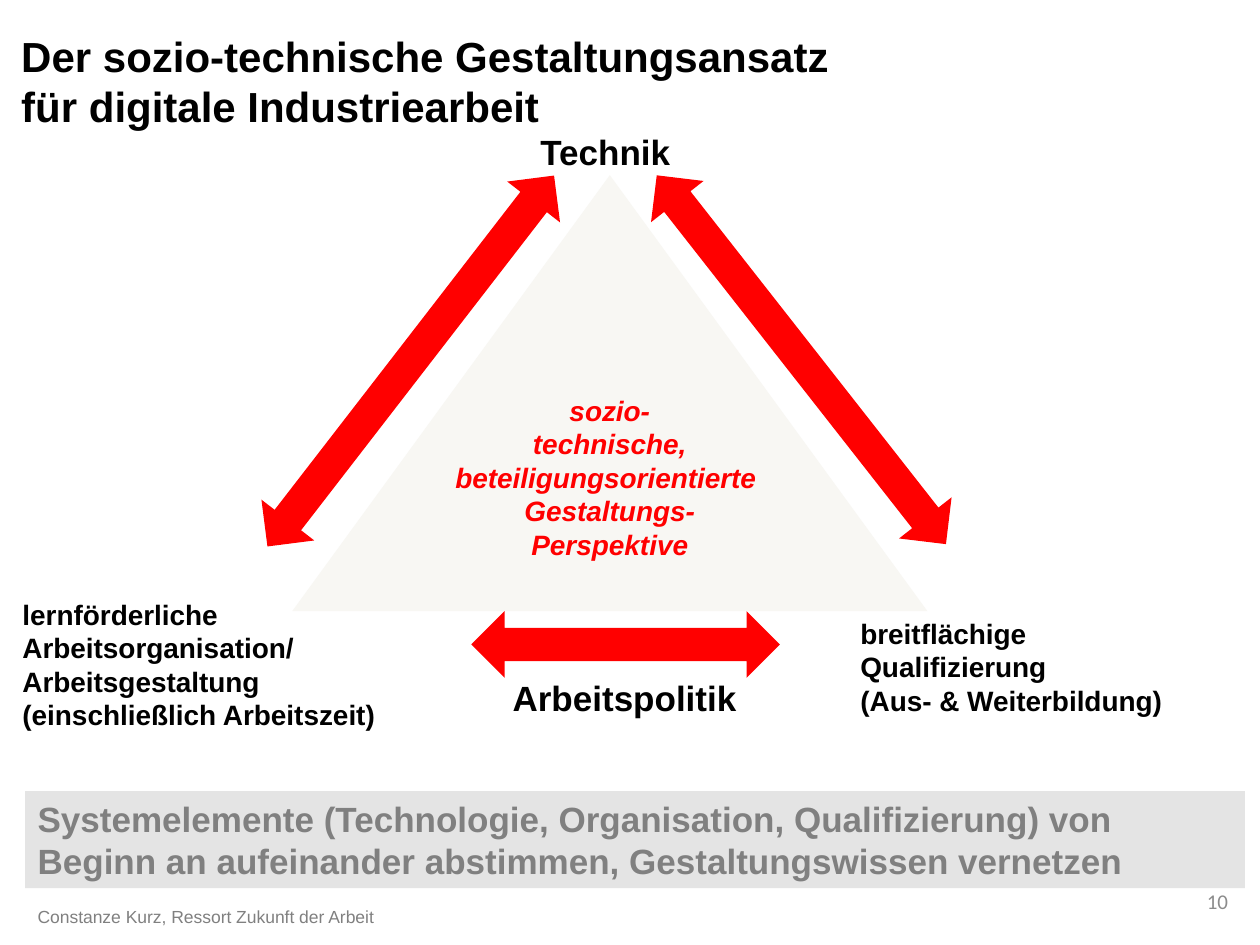
from dataclasses import dataclass
from lxml.etree import SubElement
from pptx import Presentation
from pptx.dml.color import RGBColor
from pptx.enum.shapes import MSO_SHAPE as Preset
from pptx.enum.text import MSO_ANCHOR as Anchor, PP_ALIGN as Align
from pptx.oxml.ns import qn
from pptx.util import Inches, Pt

BLACK, RED, GREY = "000000", "FF0000", "808080"


def color(value):
    return RGBColor.from_string(value)


@dataclass
class SlideBuilder:
    """Draws styled elements on the current slide."""

    slide: object
    font: str = "Arial"

    def set_text(self, shape, lines, size, ink=BLACK, bold=True, italic=False,
                 align=Align.LEFT, anchor=Anchor.TOP, wrap=True, font=None):
        frame = shape.text_frame
        frame.word_wrap = wrap
        frame.vertical_anchor = anchor
        frame.text = "\n".join(lines)
        for paragraph in frame.paragraphs:
            paragraph.alignment = align
            style = paragraph.font
            style.name, style.size = font or self.font, Pt(size)
            style.bold, style.italic = bold, italic
            style.color.rgb = color(ink)

    def text(self, box, lines, size, **style):
        shape = self.slide.shapes.add_textbox(*map(Inches, box))
        self.set_text(shape, lines, size, **style)

    def shape(self, preset, box, fill, alpha=None, rotation=0):
        shape = self.slide.shapes.add_shape(preset, *map(Inches, box))
        shape.shadow.inherit = False
        shape.fill.solid()
        shape.fill.fore_color.rgb = color(fill)
        shape.line.fill.background()
        shape.rotation = rotation
        if alpha is not None:
            tone = shape._element.spPr.find(qn("a:solidFill"))[0]
            SubElement(tone, qn("a:alpha"), val=str(alpha * 1000))
        return shape

    def core(self, box, lines):
        triangle = self.shape(Preset.ISOSCELES_TRIANGLE, box, "F8F7F3")
        frame = triangle.text_frame
        frame.margin_left = frame.margin_right = 0
        frame.margin_top = frame.margin_bottom = 0
        self.set_text(triangle, lines, 16, ink=RED, italic=True, align=Align.CENTER)

    def arrow(self, left, top, width, rotation):
        self.shape(Preset.LEFT_RIGHT_ARROW, (left, top, width, 0.53), RED,
                   rotation=rotation)

    def banner(self, box, message):
        bar = self.shape(Preset.RECTANGLE, box, "C0C0C0", alpha=42)
        self.set_text(bar, [message], 20, ink=GREY)


def main():
    presentation = Presentation()
    presentation.slide_width, presentation.slide_height = Inches(10), Inches(7.5)
    builder = SlideBuilder(presentation.slides.add_slide(presentation.slide_layouts[6]))

    builder.text((0.07, 0.19, 8.95, 0.73),
                 ["Der sozio-technische Gestaltungsansatz \vfür digitale Industriearbeit"], 24)
    builder.core((2.32, 1.39, 5.04, 3.46),
                 ["sozio-", "technische, beteiligungsorientierte ",
                  "Gestaltungs-", "Perspektive"])

    corners = [
        ((4.19, 0.99, 1.32, 0.44), 20, ["Technik"]),
        ((0.08, 4.69, 3.04, 1.18), 16,
         ["lernförderliche", "Arbeitsorganisation/", "Arbeitsgestaltung",
          "(einschließlich Arbeitszeit)"]),
        ((6.73, 4.84, 2.63, 0.91), 16,
         ["breitflächige", "Qualifizierung", "(Aus- & Weiterbildung)"]),
        ((3.97, 5.32, 2.07, 0.44), 20, ["Arbeitspolitik"]),
    ]
    for box, size, lines in corners:
        builder.text(box, lines, size, wrap=False)

    for arrow in [(1.4, 2.6, 3.72, 307.7), (4.5, 2.59, 3.72, 231.9),
                  (3.74, 4.85, 2.45, 180)]:
        builder.arrow(*arrow)

    builder.banner((0.2, 6.28, 9.68, 0.77),
                   "Systemelemente (Technologie, Organisation, Qualifizierung) von "
                   "Beginn an aufeinander abstimmen, Gestaltungswissen vernetzen")
    builder.text((0.2, 7.14, 3.86, 0.17),
                 ["Constanze Kurz, Ressort Zukunft der Arbeit"], 10, ink=GREY, bold=False)
    builder.text((9.48, 6.95, 0.64, 0.4), ["10"], 12, ink="8C8C8C", bold=False,
                 anchor=Anchor.MIDDLE, font="Calibri")
    presentation.save("out.pptx")


if __name__ == "__main__":
    main()
